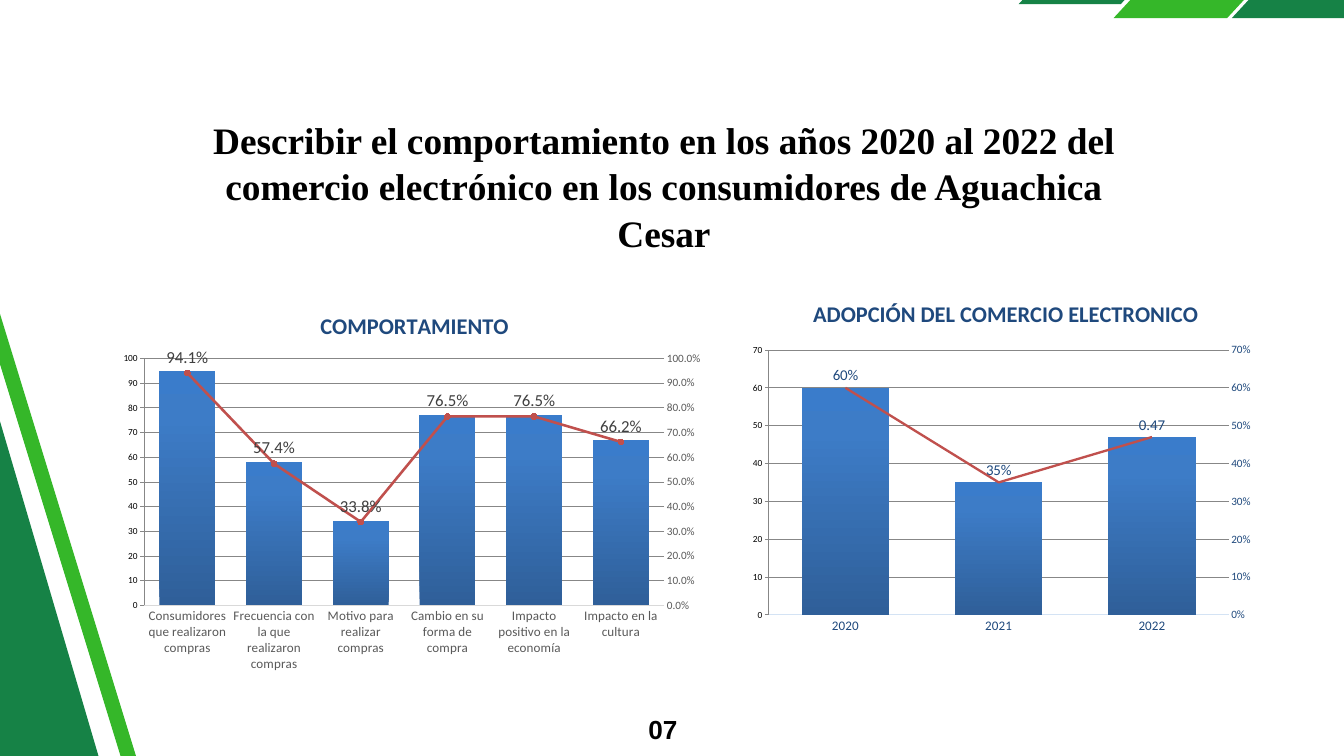
from pptx import Presentation
from pptx import util as u
from pptx.chart import axis as ax
from pptx.chart import data as cd
from pptx.dml import color as col
from pptx.enum import chart as ch
from pptx.enum import shapes, text
from pptx.oxml import ns, parse_xml

HUES = {"dark": "168246", "green": "35B729", "black": "000000", "navy": "1F497D",
        "gray": "595959", "rule": "D9D9D9", "pale": "D4E3F4", "red": "C0504D",
        "dot": "CB3E3A", "label": "404040"}
RAMP = [(0, "2F5F99"), (80, "3D7CC7"), (100, "3A7CCB")]
NS = ns.nsdecls("c", "a")


class Deck:
    def __init__(self, wide, high):
        self.prs = Presentation()
        self.prs.slide_width = u.Inches(wide)
        self.prs.slide_height = u.Inches(high)
        self.page = self.prs.slides.add_slide(self.prs.slide_layouts[6])

    def hue(self, name):
        return col.RGBColor.from_string(HUES[name])

    def font(self, font, size, hue, face="Calibri", bold=False):
        font.size, font.name, font.bold = u.Pt(size), face, bold
        font.color.rgb = self.hue(hue)

    def paint(self, shape, hue):
        shape.shadow.inherit = False
        shape.fill.solid()
        shape.fill.fore_color.rgb = self.hue(hue)
        shape.line.fill.background()

    def slant(self, left, top, wide, lean, base, hue):
        spots = [(left + lean, top), (left + lean + wide, top),
                 (left + wide, base), (left, base)]
        spots = [(u.Inches(x), u.Inches(y)) for x, y in spots]
        form = self.page.shapes.build_freeform(*spots[0], scale=1)
        form.add_line_segments(spots[1:], close=True)
        self.paint(form.convert_to_shape(), hue)

    def band(self, box, turn, hue):
        bar = self.page.shapes.add_shape(shapes.MSO_SHAPE.RECTANGLE, *map(u.Inches, box))
        bar.rotation = turn
        self.paint(bar, hue)

    def text(self, box, words, size, face, align, space):
        frame = self.page.shapes.add_textbox(*map(u.Inches, box)).text_frame
        frame.word_wrap = True
        frame.margin_left = frame.margin_right = 0
        frame.margin_top = frame.margin_bottom = 0
        para = frame.paragraphs[0]
        para.text, para.alignment, para.line_spacing = words, align, space
        self.font(para.font, size, "black", face, True)

    def place(self, node, index, **spots):
        for old in node.findall(ns.qn("c:layout")):
            node.remove(old)
        inner = '<c:layoutTarget val="inner"/>' if "w" in spots else ""
        modes = "".join(f'<c:{k}Mode val="edge"/>' for k in "xy")
        sizes = "".join(f'<c:{k} val="{v}"/>' for k, v in spots.items())
        node.insert(index, parse_xml(
            f"<c:layout {NS}><c:manualLayout>{inner}{modes}{sizes}</c:manualLayout></c:layout>"))

    def scale(self, axis, top, step, form, hue, rule=None):
        axis.minimum_scale, axis.maximum_scale, axis.major_unit = 0, top, step
        axis.major_tick_mark = ch.XL_TICK_MARK.NONE
        axis.format.line.fill.background()
        axis.has_major_gridlines = rule is not None
        if rule:
            line = axis.major_gridlines.format.line
            line.width, line.color.rgb = u.Pt(0.75), self.hue(rule)
        axis.tick_labels.number_format = form
        axis.tick_labels.number_format_is_linked = False
        self.font(axis.tick_labels.font, 12, hue)

    def split(self, area, group):
        bars = area.find(ns.qn("c:barChart"))
        ser = bars.findall(ns.qn("c:ser"))[1]
        for flag in ser.findall(ns.qn("c:invertIfNegative")):
            ser.remove(flag)
        line = parse_xml(
            f'<c:lineChart {NS}><c:grouping val="{group}"/><c:varyColors val="0"/>'
            '<c:marker val="1"/><c:axId val="501"/><c:axId val="502"/></c:lineChart>')
        line.insert(2, ser)
        bars.addnext(line)
        last = area.findall(ns.qn("c:valAx"))[-1]
        for tag, own, other, side, gone, cross in [
                ("valAx", 502, 501, "r", 0, "max"), ("catAx", 501, 502, "b", 1, "autoZero")]:
            last.addnext(parse_xml(
                f'<c:{tag} {NS}><c:axId val="{own}"/><c:scaling/><c:delete val="{gone}"/>'
                f'<c:axPos val="{side}"/><c:majorTickMark val="none"/>'
                '<c:minorTickMark val="none"/><c:tickLblPos val="nextTo"/>'
                f'<c:crossAx val="{other}"/><c:crosses val="{cross}"/></c:{tag}>'))
        return ax.ValueAxis(area.findall(ns.qn("c:valAx"))[-1])

    def chart(self, box, kind, title, spot, plot, cats, bars, rates, top, gap, group,
              form, hue, rule, width, size, tint, base, dot=None):
        data = cd.CategoryChartData()
        data.categories = cats
        data.add_series("Series 1", bars)
        data.add_series("Series 2", rates)
        chart = self.page.shapes.add_chart(kind, *map(u.Inches, box), data).chart
        self.font(chart.font, 10, "black")
        chart.has_legend = False
        chart.has_title = True
        para = chart.chart_title.text_frame.paragraphs[0]
        para.text = title
        self.font(para.font, 24, "navy", bold=True)
        self.place(chart.chart_title._element, 1, x=spot[0], y=spot[1])
        area = chart._chartSpace.find(".//" + ns.qn("c:plotArea"))
        right = self.split(area, group)
        self.place(area, 0, **dict(zip("xywh", plot)))
        self.scale(chart.value_axis, top, 10, "0", hue, rule)
        self.scale(right, top / 100, 0.1, form, hue)
        cat = chart.category_axis
        cat.major_tick_mark = ch.XL_TICK_MARK.NONE
        cat.format.line.width, cat.format.line.color.rgb = u.Pt(base), self.hue(rule)
        self.font(cat.tick_labels.font, 14, hue)

        cols, line = chart.plots
        cols.vary_by_categories = False
        cols.gap_width = gap
        stops = "".join(f'<a:gs pos="{pos * 1000}"><a:srgbClr val="{rgb}"/></a:gs>'
                        for pos, rgb in RAMP)
        cols.series[0]._element.get_or_add_spPr().append(parse_xml(
            f'<a:gradFill {NS}><a:gsLst>{stops}</a:gsLst>'
            '<a:lin ang="16200000" scaled="0"/></a:gradFill>'))

        rate = line.series[0]
        rate.smooth = False
        rate.format.line.width = u.Pt(width)
        rate.format.line.color.rgb = self.hue("red")
        mark = rate.marker
        mark.style = ch.XL_MARKER_STYLE.CIRCLE if dot else ch.XL_MARKER_STYLE.NONE
        if dot:
            mark.size = dot
            mark.format.fill.solid()
            mark.format.fill.fore_color.rgb = self.hue("dot")
            mark.format.line.fill.background()
        tags = rate.data_labels
        tags.show_value = True
        tags.position = ch.XL_LABEL_POSITION.ABOVE
        tags.number_format, tags.number_format_is_linked = form, False
        self.font(tags.font, size, tint)
        return rate

    def note(self, rate, index, words, size, hue):
        tag = rate.points[index].data_label
        tag.text_frame.text = words
        self.font(tag.text_frame.paragraphs[0].runs[0].font, size, hue)
        tag.position = ch.XL_LABEL_POSITION.ABOVE


def main():
    deck = Deck(20, 11.25)
    deck.slant(15.16, -0.86, 1.52, 0.85, 0.06, "dark")
    for left, hue in [(16.57, "green"), (18.33, "dark")]:
        deck.slant(left, -1.06, 1.69, 1.23, 0.27, hue)
    deck.band((-10.09, 6.23, 16.41, 5.01), 253.6, "dark")
    deck.band((-7.08, 8.59, 16.41, 0.22), 252.9, "green")
    deck.text((2.92, 1.71, 13.92, 2.02),
              "Describir el comportamiento en los años 2020 al 2022 del comercio "
              "electrónico en los consumidores de Aguachica Cesar",
              40, "Times New Roman", text.PP_ALIGN.CENTER, 1.04)
    deck.text((9.52, 10.54, 0.56, 0.5), "07", 28, "Arial", text.PP_ALIGN.RIGHT, u.Pt(39.2))
    deck.chart((1.67, 4.34, 8.93, 5.78), ch.XL_CHART_TYPE.COLUMN_STACKED,
               "COMPORTAMIENTO", (0.34, 0.04), (0.053, 0.172, 0.867, 0.636),
               ["Consumidores que realizaron compras",
                "Frecuencia con la que realizaron compras",
                "Motivo para realizar compras", "Cambio en su forma de compra",
                "Impacto positivo en la economía", "Impacto en la cultura"],
               [95, 58, 34, 77, 77, 67], [0.941, 0.574, 0.338, 0.765, 0.765, 0.662],
               100, 55, "stacked", "0.0%", "gray", "rule", 2.75, 18, "label", 1, dot=6)
    rate = deck.chart((11.08, 4.34, 7.68, 5.2), ch.XL_CHART_TYPE.COLUMN_CLUSTERED,
                      "ADOPCIÓN DEL COMERCIO ELECTRONICO", (0.125, 0.01),
                      (0.047, 0.167, 0.891, 0.758), ["2020", "2021", "2022"],
                      [60, 35, 47], [0.6, 0.35, 0.47], 70, 75, "standard", "0%",
                      "navy", "pale", 2.5, 16, "navy", 0.75)
    deck.note(rate, 2, "0.47", 16, "navy")
    deck.prs.save("out.pptx")


if __name__ == "__main__":
    main()
